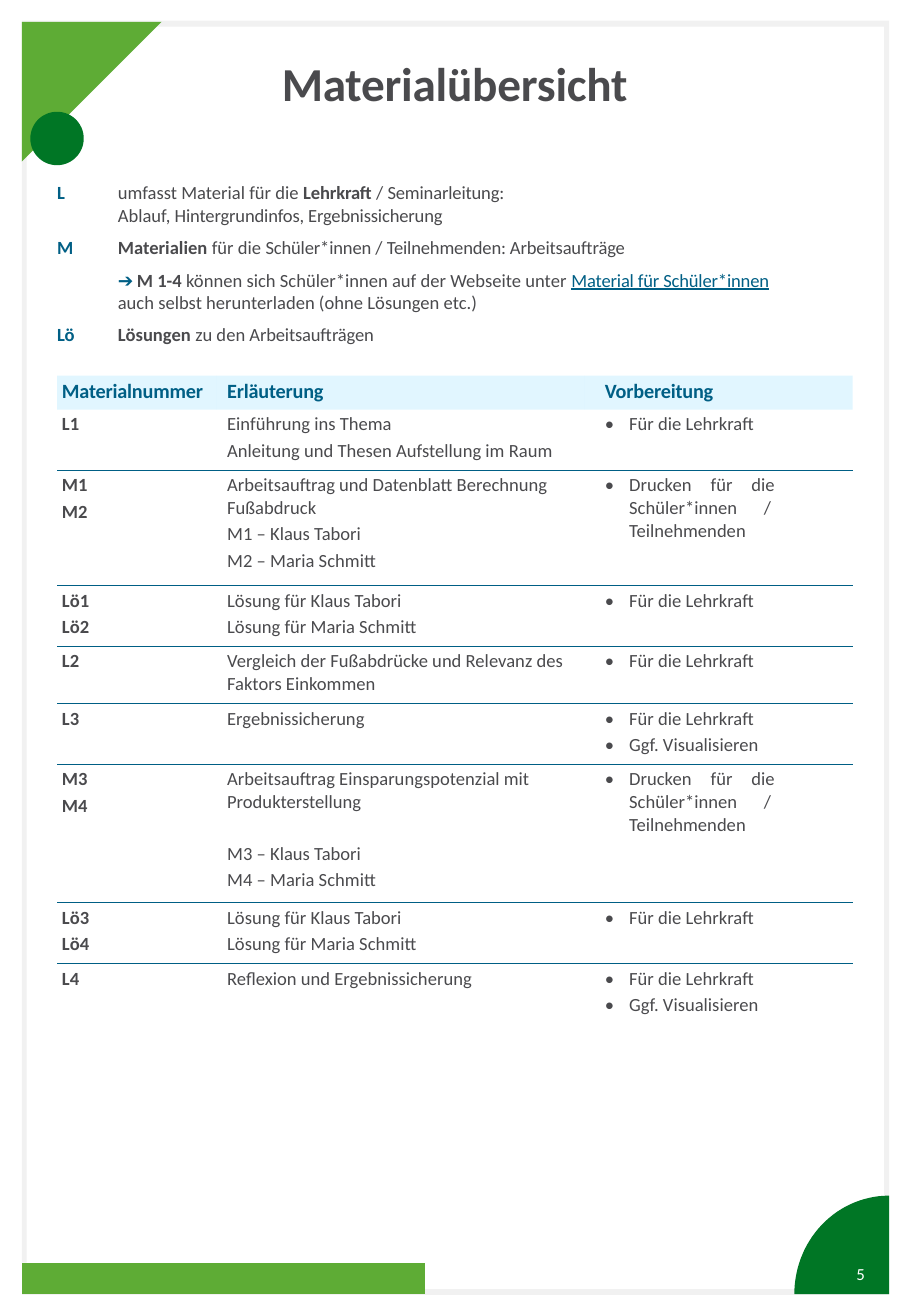
import math

from lxml import etree
from pptx import Presentation
from pptx import util as u
from pptx.dml.color import RGBColor
from pptx.enum import text
from pptx.oxml import ns

GREY = RGBColor(0xF1, 0xF1, 0xF1)
LIGHT_GREEN = RGBColor(0x5E, 0xAC, 0x35)
DARK_GREEN = RGBColor(0x00, 0x76, 0x25)
INK = RGBColor(0x4A, 0x4A, 0x4D)
BLUE = RGBColor(0x00, 0x5F, 0x85)
PALE_BLUE = RGBColor(0xC4, 0xEE, 0xFF)
WHITE = RGBColor(0xFF, 0xFF, 0xFF)

TIGHT = {"spacing": -0.1}
BOLD = {"bold": True}
LABEL = {"bold": True, "color": BLUE, "spacing": -0.1}
LINK = {"color": BLUE, "underline": True, "spacing": -0.1}

TEACHER = "Für die Lehrkraft"
VISUALISE = "Ggf. Visualisieren"
PRINT = "Drucken für die Schüler*innen / \tTeilnehmenden"
SOLUTIONS = ["Lösung für Klaus Tabori", "Lösung für Maria Schmitt"]

HEADERS = ["Materialnummer", "Erläuterung", "Vorbereitung"]
COLUMN_WIDTHS = [1.31, 3.03, 2.21]
COLUMN_INDENTS = [0.04, 0.09, 0.17]
# row height, numbers, explanations, preparation
MATERIALS = [
    (0.5, ["L1"], ["Einführung ins Thema",
                   "Anleitung und Thesen Aufstellung im Raum"], [TEACHER]),
    (0.95, ["M1", "M2"], ["Arbeitsauftrag und Datenblatt Berechnung Fußabdruck",
                          "M1 – Klaus Tabori", "M2 – Maria Schmitt"], [PRINT]),
    (0.5, ["Lö1", "Lö2"], SOLUTIONS, [TEACHER]),
    (0.47, ["L2"], ["Vergleich der Fußabdrücke und Relevanz des Faktors Einkommen"],
     [TEACHER]),
    (0.5, ["L3"], ["Ergebnissicherung"], [TEACHER, VISUALISE]),
    (1.14, ["M3", "M4"], ["Arbeitsauftrag Einsparungspotenzial mit Produkterstellung",
                          "M3 – Klaus Tabori", "M4 – Maria Schmitt"], [PRINT]),
    (0.5, ["Lö3", "Lö4"], SOLUTIONS, [TEACHER]),
    (0.43, ["L4"], ["Reflexion und Ergebnissicherung"], [TEACHER, VISUALISE]),
]

# space before, runs
EXPLANATION = [
    (1, [("umfasst Material für die ", {}), ("Lehrkraft ", {**BOLD, **TIGHT}),
         ("/ ", {}), ("Seminarleitung:", TIGHT)]),
    (0.1, [("Ablauf, ", {}), ("Hintergrundinfos, Ergebnissicherung", TIGHT)]),
    (6, [("Materialien ", BOLD), ("für die ", {}), ("Schüler*innen ", TIGHT),
         ("/ ", {}), ("Teilnehmenden: Arbeitsaufträge", TIGHT)]),
    (6.1, [("➔ ", {"name": "Arial", "color": BLUE, "spacing": -1}), ("M 1-4 ", BOLD),
           ("können sich Schüler*innen auf der Webseite unter ", {}),
           ("Material für Schüler*innen", LINK)]),
    (0, [("auch selbst herunterladen (ohne Lösungen etc.)", {})]),
    (6, [("Lösungen ", BOLD), ("zu den", {}), (" Arbeitsaufträgen", TIGHT)]),
]


class Page:
    def __init__(self, slide):
        self.slide = slide
        self.style = {"name": "Calibri", "size": 11, "color": INK, "bold": False,
                      "spacing": 0}

    def outline(self, color, *contours):
        """Draw closed contours as one filled shape."""
        builder = None
        for contour in contours:
            start, *others = [(u.Inches(x), u.Inches(y)) for x, y in contour]
            if builder:
                builder.move_to(*start)
            else:
                builder = self.slide.shapes.build_freeform(*start)
            builder.add_line_segments(others, close=True)
        shape = builder.convert_to_shape()
        shape.shadow.inherit = False
        shape.fill.solid()
        shape.fill.fore_color.rgb = color
        shape.line.fill.background()

    def paragraph(self, frame, number, runs, indent=0.01, hanging=0, **formats):
        paragraph = frame.add_paragraph() if number else frame.paragraphs[0]
        for key, value in formats.items():
            setattr(paragraph, key, value)
        properties = paragraph._p.get_or_add_pPr()
        properties.set("marL", str(u.Inches(indent)))
        properties.set("indent", str(u.Inches(-hanging)))
        if hanging:
            etree.SubElement(properties, ns.qn("a:buFont")).set("typeface", "Calibri")
            etree.SubElement(properties, ns.qn("a:buChar")).set("char", "•")
            stops = etree.SubElement(properties, ns.qn("a:tabLst"))
            etree.SubElement(stops, ns.qn("a:tab"), pos=str(u.Inches(indent)), algn="l")
        for content, changes in runs:
            run = paragraph.add_run()
            run.text = content
            values = {**self.style, **changes}
            run.font.color.rgb = values.pop("color")
            run.font.size = u.Pt(values.pop("size"))
            run._r.get_or_add_rPr().set("spc", str(round(100 * values.pop("spacing"))))
            for key, value in values.items():
                setattr(run.font, key, value)

    def textbox(self, box, paragraphs, top=0.01, **formats):
        frame = self.slide.shapes.add_textbox(*map(u.Inches, box)).text_frame
        frame.word_wrap = True
        frame.margin_left = frame.margin_right = frame.margin_bottom = 0
        frame.margin_top = u.Inches(top)
        for number, (before, runs) in enumerate(paragraphs):
            self.paragraph(frame, number, runs, space_before=u.Pt(before), **formats)

    def table(self, box, widths, heights):
        frame = self.slide.shapes.add_table(
            len(heights), len(widths), *map(u.Inches, box))
        table = frame.table
        table.first_row = table.horz_banding = False
        for column, width in zip(table.columns, widths):
            column.width = u.Inches(width)
        for row, height in zip(table.rows, heights):
            row.height = u.Inches(height)
        return table

    def cell(self, cell, runs, column, ruled, bullets=False):
        """Fill a cell, one paragraph per run, with rules on the named sides."""
        cell.margin_left = cell.margin_right = cell.margin_bottom = 0
        cell.margin_top = u.Inches(0.03)
        cell.fill.background()
        for number, run in enumerate(runs):
            formats = {"space_before": u.Pt(2 if number else 2.2),
                       "indent": COLUMN_INDENTS[column]}
            if bullets:
                formats.update(indent=0.37, hanging=0.2)
            if run[0] == PRINT:
                formats["alignment"] = text.PP_ALIGN.JUSTIFY
                cell.margin_right = u.Inches(0.64)
            if run[0].startswith("M3 –"):
                formats["space_before"] = u.Pt(17)
            self.paragraph(cell.text_frame, number, [run], **formats)
        properties = cell._tc.get_or_add_tcPr()
        for place, side in enumerate(("lnL", "lnR", "lnT", "lnB")):
            line = etree.Element(ns.qn("a:" + side), w=str(u.Pt(0.5)))
            if side in ruled:
                fill = etree.SubElement(line, ns.qn("a:solidFill"))
                etree.SubElement(fill, ns.qn("a:srgbClr")).set("val", str(BLUE))
            else:
                etree.SubElement(line, ns.qn("a:noFill"))
            properties.insert(place, line)


def arc(center, radii, start, end, step):
    """Points on an ellipse between two angles in degrees."""
    angles = [math.radians(angle) for angle in range(start, end + 1, step)]
    return [(center[0] + radii[0] * math.cos(a), center[1] + radii[1] * math.sin(a))
            for a in angles]


def rectangle(left, top, right, bottom):
    return [(left, top), (right, top), (right, bottom), (left, bottom)]


def draw_frame(page):
    page.outline(GREY, rectangle(0.18, 10.61, 7.32, 10.66))
    page.outline(GREY, rectangle(7.28, 0.22, 7.32, 10.61),
                 [(7.32, 0.17), (0.18, 0.17), (0.18, 10.39), (0.22, 10.39),
                  (0.22, 0.22), (7.32, 0.22)])
    page.outline(LIGHT_GREEN, [(0.18, 0.18), (1.33, 0.18), (0.18, 1.33)])
    corner = (7.32, 10.65)
    page.outline(DARK_GREEN, arc((0.47, 1.14), (0.22, 0.22), 0, 354, 6),
                 [corner] + arc(corner, (0.78, 0.81), 180, 270, 3))
    page.outline(LIGHT_GREEN, rectangle(0.18, 10.39, 3.5, 10.65))


def draw_materials(page):
    heights = [0.28] + [material[0] for material in MATERIALS]
    table = page.table((0.47, 3.09, 6.55, sum(heights)), COLUMN_WIDTHS, heights)
    for column, header in enumerate(HEADERS):
        cell = table.cell(0, column)
        page.cell(cell, [(header, {**LABEL, "size": 12})], column, ())
        cell.fill.solid()
        cell.fill.fore_color.rgb = PALE_BLUE
        color = cell._tc.tcPr.find(".//" + ns.qn("a:solidFill") + "/" + ns.qn("a:srgbClr"))
        etree.SubElement(color, ns.qn("a:alpha")).set("val", "50000")
    for row, (_, *columns) in enumerate(MATERIALS, start=1):
        ruled = [side for side, end in (("lnT", 1), ("lnB", len(MATERIALS))) if row != end]
        for column, lines in enumerate(columns):
            runs = [(line, {} if column else BOLD) for line in lines]
            page.cell(table.cell(row, column), runs, column, ruled, column == 2)


def main():
    presentation = Presentation()
    presentation.slide_width = u.Inches(7.5)
    presentation.slide_height = u.Inches(10.83)
    page = Page(presentation.slides.add_slide(presentation.slide_layouts[6]))
    draw_frame(page)
    title = ("Materialübersicht", {"size": 28, "bold": True, "spacing": -0.1})
    page.textbox((0.63, 0.43, 6.14, 0.5), [(0.9, [title])], top=0.02, indent=1.69)
    page.textbox((7.01, 10.42, 0.24, 0.17), [(0, [("5", {"size": 10, "color": WHITE})])],
                 top=0, indent=0.04, line_spacing=u.Pt(10.4))
    draw_materials(page)
    for label, top in [("L", 1.48), ("M", 1.93), ("Lö", 2.65)]:
        page.textbox((0.46, top, 0.25, 0.21), [(1, [(label, LABEL)])])
    page.textbox((0.96, 1.48, 5.45, 1.38), EXPLANATION, line_spacing=u.Pt(13.2))
    presentation.save("out.pptx")


if __name__ == "__main__":
    main()
